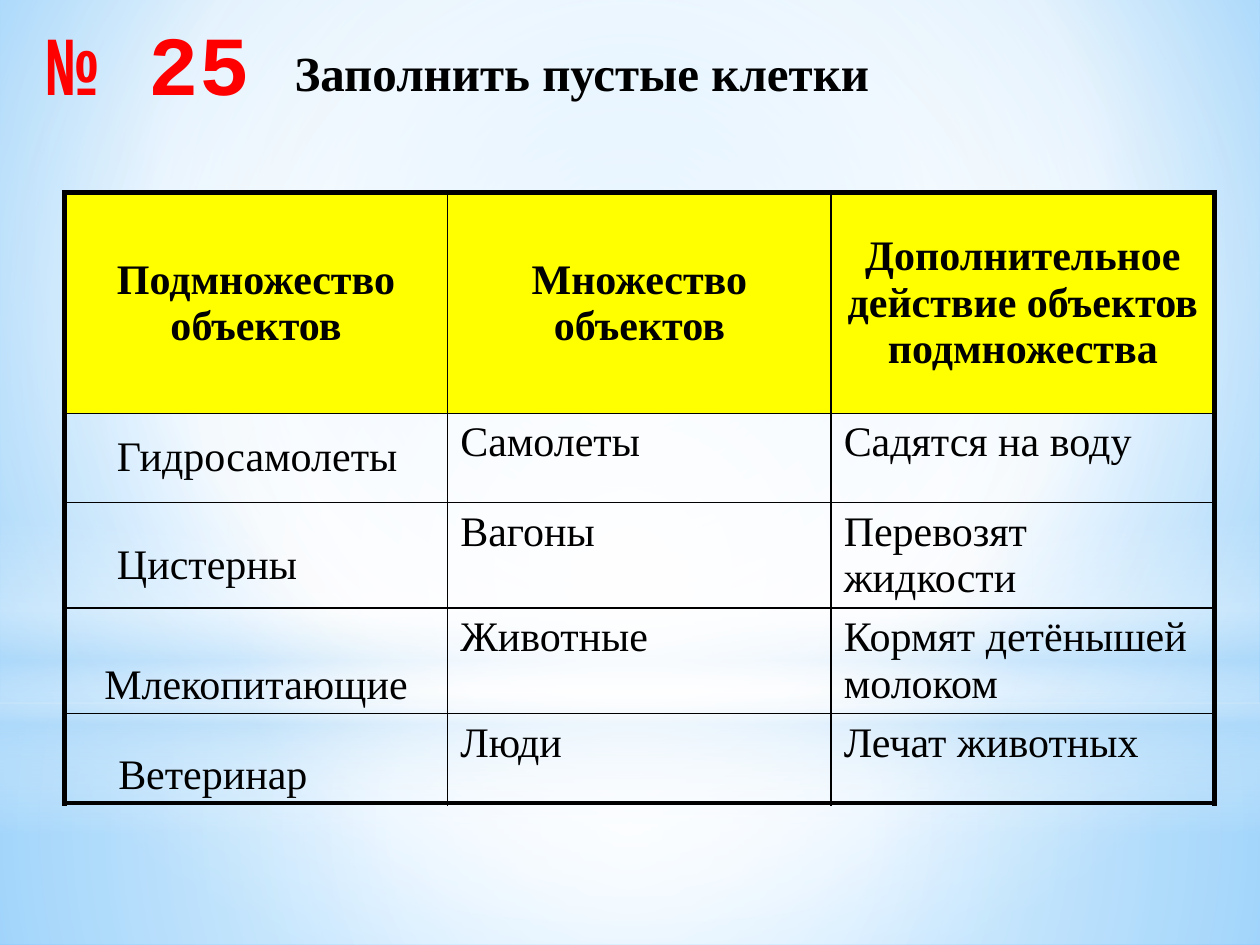
from dataclasses import dataclass

from pptx import Presentation
from pptx.dml.color import RGBColor
from pptx.enum import shapes, text
from pptx.oxml import parse_xml
from pptx.oxml.ns import nsdecls, qn
from pptx.util import Inches, Pt


@dataclass(frozen=True)
class Theme:
    """Colours, fonts and type sizes of the slide."""
    ink: str = "000000"
    red: str = "FF0000"
    head: str = "FFFF00"
    white: str = "FFFFFF"
    sky: str = "B4DCFA"
    pale: str = "9ED5FF"
    deep: str = "5BB9FF"
    serif: str = "Times New Roman"
    mono: str = "Courier New"
    body: int = 24
    title: int = 28
    label: int = 48
    thin: int = 1
    thick: int = 3


T = Theme()
ROWS = [
    ("Подмножество объектов", "Множество объектов",
     "Дополнительное действие объектов подмножества"),
    ("", "Самолеты", "Садятся на воду"),
    ("", "Вагоны", "Перевозят жидкости"),
    ("", "Животные", "Кормят детёнышей молоком"),
    ("", "Люди", "Лечат животных"),
]
NAMES = [
    ("Гидросамолеты", 0.83, 3.36, 2.45),
    ("Цистерны", 0.83, 4.22, 1.65),
    ("Млекопитающие", 0.73, 5.17, 2.63),
    ("Ветеринар", 0.84, 5.88, 1.72),
]


def paint(fill, root, stops, to=None):
    """Give a fill gradient stops, circular around a rectangle or vertical."""
    fill.gradient()
    marks = "".join(
        f'<a:gs pos="{pos * 1000}"><a:srgbClr val="{tone}">'
        f'<a:alpha val="{alpha * 1000}"/></a:srgbClr></a:gs>'
        for pos, tone, alpha in stops)
    way = '<a:lin ang="5400000" scaled="0"/>'
    if to:
        edges = " ".join(f'{k}="{v * 1000}"' for k, v in zip("ltrb", to))
        way = f'<a:path path="circle"><a:fillToRect {edges}/></a:path>'
    old = root.find(".//" + qn("a:gradFill"))
    old.getparent().replace(old, parse_xml(
        f'<a:gradFill {nsdecls("a")} rotWithShape="1">'
        f'<a:gsLst>{marks}</a:gsLst>{way}</a:gradFill>'))


def add_glow(slide, kind, top, height, stops, to=None):
    """Add a full-width borderless shape with a soft gradient."""
    glow = slide.shapes.add_shape(
        kind, 0, Inches(top), Inches(10), Inches(height))
    glow.shadow.inherit = False
    glow.line.fill.background()
    paint(glow.fill, glow.element, stops, to)


def add_sky(slide):
    """Lay the background and its light layers."""
    paint(slide.background.fill, slide.element,
          [(0, T.pale, 100), (60, T.white, 100), (100, T.deep, 100)],
          (20, 10, 20, 60))
    mid = (50, 50, 50, 50)
    rect, oval = shapes.MSO_SHAPE.RECTANGLE, shapes.MSO_SHAPE.OVAL
    add_glow(slide, rect, 5.58, 1.92,
             [(0, T.white, 91), (37, T.white, 76), (100, T.sky, 79)], mid)
    add_glow(slide, rect, 0, 5.58,
             [(0, T.white, 89), (48, T.white, 62), (100, T.sky, 79)], mid)
    add_glow(slide, rect, 4.12, 2.5,
             [(0, T.white, 0), (29, T.white, 30), (45, T.sky, 40),
              (55, T.white, 26), (65, T.sky, 60), (100, T.white, 0)])
    add_glow(slide, oval, 1.75, 5.58,
             [(0, T.white, 100), (56, T.white, 0)], mid)


def write(frame, words, size, font=T.serif, tone=T.ink, bold=False):
    """Put one styled paragraph into a text frame."""
    frame.text = words
    for run in frame.paragraphs[0].runs:
        run.font.size = Pt(size)
        run.font.name = font
        run.font.bold = bold
        run.font.color.rgb = RGBColor.from_string(tone)


def edge(cell, widths):
    """Set left, right, top and bottom borders; zero hides a border."""
    props = cell._tc.get_or_add_tcPr()
    for spot, (side, width) in enumerate(zip("LRTB", widths)):
        ink = (f'<a:solidFill><a:srgbClr val="{T.ink}"/></a:solidFill>'
               if width else "<a:noFill/>")
        props.insert(spot, parse_xml(
            f'<a:ln{side} {nsdecls("a")} w="{Pt(width)}">{ink}</a:ln{side}>'))


def add_grid(slide, left, top, width, highs, count):
    """Add an unstyled table with equal columns and given row heights."""
    grid = slide.shapes.add_table(
        len(highs), count, Inches(left), Inches(top),
        Inches(width), Inches(sum(highs))).table
    grid.first_row = grid.horz_banding = False
    for row, high in zip(grid.rows, highs):
        row.height = Inches(high)
    for cell in grid.iter_cells():
        cell.fill.background()
    return grid


def add_label(slide):
    """Add the exercise number."""
    cell = add_grid(slide, 0.28, 0.13, 2.28, [0.9], 1).cell(0, 0)
    cell.vertical_anchor = text.MSO_ANCHOR.MIDDLE
    write(cell.text_frame, "№ 25", T.label, T.mono, T.red, True)
    edge(cell, [0] * 4)


def add_task(slide):
    """Add the table of subsets, sets and actions."""
    last = len(ROWS) - 1
    grid = add_grid(slide, 0.51, 1.53, 9.13, [1.75] + [0.71] * last, 3)
    for r, row in enumerate(ROWS):
        for c, words in enumerate(row):
            cell = grid.cell(r, c)
            write(cell.text_frame, words, T.body, bold=r == 0)
            if r == 0:
                cell.fill.solid()
                cell.fill.fore_color.rgb = RGBColor.from_string(T.head)
                cell.vertical_anchor = text.MSO_ANCHOR.MIDDLE
                cell.text_frame.paragraphs[0].alignment = text.PP_ALIGN.CENTER
            outer = (c == 0, c == 2, r == 0, r == last)
            edge(cell, [T.thick if out else T.thin for out in outer])


def add_text(slide, words, left, top, width, high, size, bold=False, wrap=False):
    """Add a text box that fits its text."""
    frame = slide.shapes.add_textbox(
        Inches(left), Inches(top), Inches(width), Inches(high)).text_frame
    frame.word_wrap = wrap
    frame.auto_size = text.MSO_AUTO_SIZE.SHAPE_TO_FIT_TEXT
    write(frame, words, size, bold=bold)


def main():
    """Build and save the slide."""
    deck = Presentation()
    deck.slide_width, deck.slide_height = Inches(10), Inches(7.5)
    slide = deck.slides.add_slide(deck.slide_layouts[6])
    add_sky(slide)
    add_label(slide)
    add_task(slide)
    add_text(slide, "Заполнить пустые клетки", 2.24, 0.29, 5.04, 0.57,
             T.title, True, True)
    for words, left, top, width in NAMES:
        add_text(slide, words, left, top, width, 0.5, T.body)
    deck.save("out.pptx")


if __name__ == "__main__":
    main()
